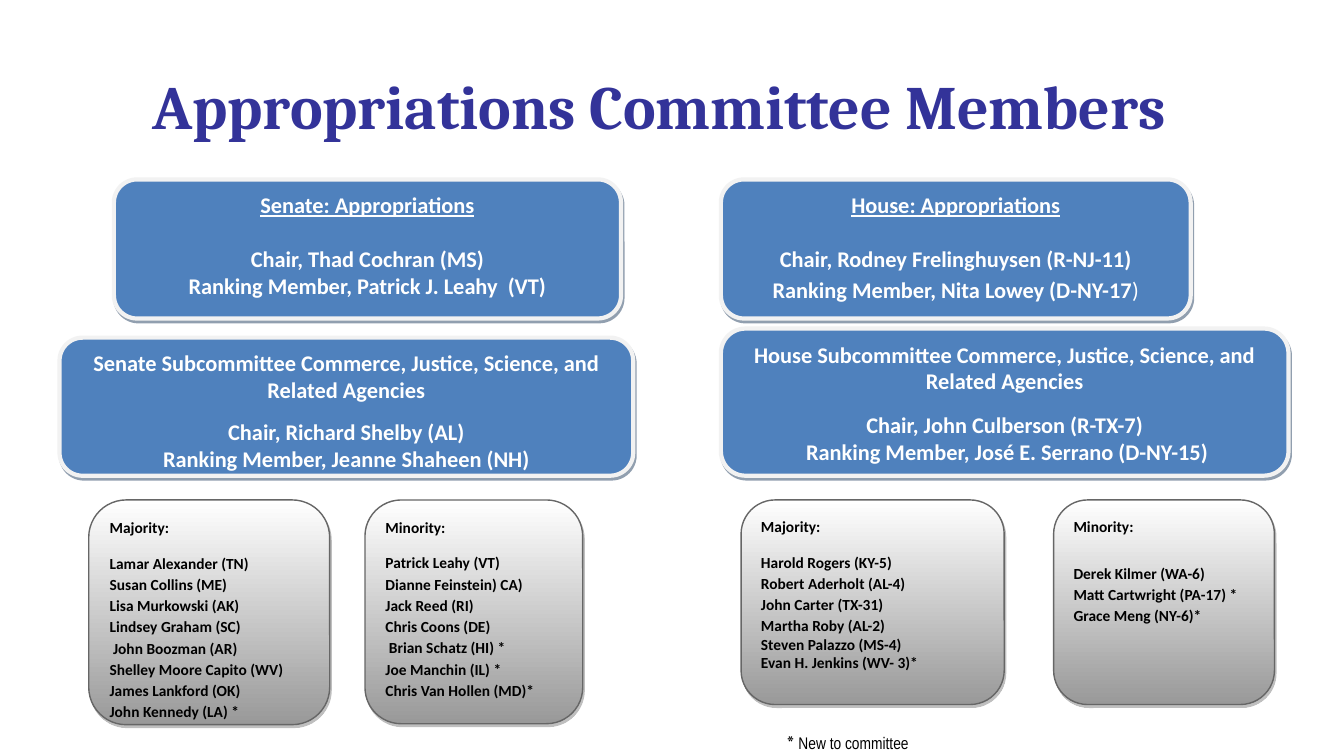
from lxml import etree
from pptx import Presentation
from pptx.dml.color import RGBColor
from pptx.enum.shapes import MSO_SHAPE
from pptx.enum.text import MSO_ANCHOR, MSO_AUTO_SIZE, PP_ALIGN
from pptx.oxml import parse_xml
from pptx.oxml.ns import nsdecls, qn
from pptx.util import Pt

PX = 9144
ROUND = MSO_SHAPE.ROUNDED_RECTANGLE
TOP, MIDDLE = MSO_ANCHOR.TOP, MSO_ANCHOR.MIDDLE
NONE = MSO_AUTO_SIZE.NONE
LEFT, CENTER = PP_ALIGN.LEFT, PP_ALIGN.CENTER

HEX = {
    "title": "333399", "white": "FFFFFF", "black": "000000",
    "blue": "4F81BD", "frame": "F2F2F2", "navy": "254061",
    "gray": "999999", "edge": "666666", "shade": "808080",
}
TITLE = {"name": "Cambria", "size": Pt(44), "bold": True}
HEAD = {"name": "Calibri", "size": Pt(16), "bold": True}
NAMES = {"name": "Calibri", "size": Pt(11), "bold": True}
STAR = {"name": "Cambria", "size": Pt(14), "bold": False}
NOTE = {"name": "Arial Narrow", "size": Pt(12), "bold": False}
UNDER = {"underline": True}
LOOSE = 1.15


def add_run(para, text, look, color):
    run = para.add_run()
    run.text = text
    for key, value in look.items():
        setattr(run.font, key, value)
    run.font.color.rgb = RGBColor.from_string(HEX[color])


def style(shape, line, width, shade):
    shape.line.color.rgb = RGBColor.from_string(HEX[line])
    shape.line.width = Pt(width)
    shape.shadow.inherit = False
    glow = shape.element.spPr.find(qn("a:effectLst"))
    cast = etree.SubElement(glow, qn("a:outerShdw"), dist="28400", dir="3780000",
                            algn="ctr", rotWithShape="0")
    tone = etree.SubElement(cast, qn("a:srgbClr"), val=HEX[shade])
    etree.SubElement(tone, qn("a:alpha"), val="50000")
    frame = shape.text_frame
    frame.word_wrap = True
    frame.auto_size = NONE
    frame.vertical_anchor = TOP


deck = Presentation()
deck.slide_width, deck.slide_height = 1333 * PX, 750 * PX
slide = deck.slides.add_slide(deck.slide_layouts[1])
shapes = slide.shapes

title = shapes.title
title.left, title.top, title.width, title.height = [n * PX for n in (133, 50, 1056, 108)]
title.text_frame.auto_size = NONE
title.text_frame.vertical_anchor = MIDDLE
para = title.text_frame.paragraphs[0]
para.alignment = CENTER
add_run(para, "Appropriations Committee Members ", TITLE, "title")

body = slide.placeholders[1]
heads = [
    ((715, 178, 466, 138), 19.5, [
        "House: Appropriations",
        "Chair, Rodney Frelinghuysen (R-NJ-11)",
        "Ranking Member, Nita Lowey (D-NY-17"]),
    ((113, 178, 503, 138), 19.5, [
        "Senate: Appropriations",
        "Chair, Thad Cochran (MS)",
        "Ranking Member, Patrick J. Leahy  (VT)"]),
    ((715, 326, 563, 146), 12, [
        "House Subcommittee Commerce, Justice, Science, and Related Agencies",
        "Chair, John Culberson (R-TX-7)",
        " Ranking Member, José E. Serrano (D-NY-15)"]),
    ((59, 335, 569, 137), 11, [
        "Senate Subcommittee Commerce, Justice, Science, and Related Agencies",
        "Chair, Richard Shelby (AL)",
        "Ranking Member, Jeanne Shaheen (NH)"]),
]
for spot, gap, lines in heads:
    left, top, width, height = [n * PX for n in spot]
    main = lines[0].endswith(": Appropriations")
    listed = lines[0].startswith("Senate:")
    if listed:
        box = body
        box.left, box.top, box.width, box.height = left, top, width, height
        box.element.spPr.append(parse_xml(
            f'<a:prstGeom {nsdecls("a")} prst="roundRect"><a:avLst/></a:prstGeom>'))
    else:
        box = shapes.add_shape(ROUND, left, top, width, height)
    box.fill.solid()
    box.fill.fore_color.rgb = RGBColor.from_string(HEX["blue"])
    style(box, "frame", 3, "navy")
    for row, text in enumerate(lines):
        para = box.text_frame.add_paragraph() if row else box.text_frame.paragraphs[0]
        para.alignment = CENTER
        para.space_before = Pt(gap if row == 1 else 0)
        if listed:
            props = para._p.get_or_add_pPr()
            props.set("marL", "0")
            props.set("indent", "0")
            etree.SubElement(props, qn("a:buNone"))
        add_run(para, text, HEAD | UNDER if main and row == 0 else HEAD, "white")
    if text.endswith("17"):
        para.line_spacing = LOOSE
        add_run(para, ")", HEAD | {"bold": False}, "white")

groups = [
    ((1045, 496, 219, 203), 18, [
        "Minority:", "Derek Kilmer (WA-6)", "Matt Cartwright (PA-17) *",
        "Grace Meng (NY-6)*"]),
    ((735, 496, 261, 203), 10, [
        "Majority:", "Harold Rogers (KY-5)", "Robert Aderholt (AL-4)",
        "John Carter (TX-31)", "Martha Roby (AL-2)", "Steven Palazzo (MS-4)",
        "Evan H. Jenkins (WV- 3)*"]),
    ((362, 496, 216, 222), 10, [
        "Minority:", "Patrick Leahy (VT)", "Dianne Feinstein) CA)",
        "Jack Reed (RI)", "Chris Coons (DE)", " Brian Schatz (HI) *",
        "Joe Manchin (IL) *", "Chris Van Hollen (MD)*"]),
    ((88, 496, 239, 223), 10, [
        "Majority:", "Lamar Alexander (TN)", "Susan Collins (ME)",
        "Lisa Murkowski (AK)", "Lindsey Graham (SC)", " John Boozman (AR)",
        "Shelley Moore Capito (WV)", "James Lankford (OK)",
        "John Kennedy (LA) *"]),
]
tight = ("Steven Palazzo (MS-4)", "Evan H. Jenkins (WV- 3)*")
for spot, gap, lines in groups:
    box = shapes.add_shape(ROUND, *[n * PX for n in spot])
    box.fill.gradient()
    box.fill.gradient_angle = 270
    for stop, tone, place in zip(box.fill.gradient_stops, ("white", "gray"), (0, 1)):
        stop.color.rgb = RGBColor.from_string(HEX[tone])
        stop.position = place
    style(box, "edge", 1, "shade")
    for row, text in enumerate(lines):
        para = box.text_frame.add_paragraph() if row else box.text_frame.paragraphs[0]
        para.alignment = LEFT
        para.space_before = Pt(gap if row == 1 else 0)
        para.line_spacing = 1.0 if text in tight else LOOSE
        add_run(para, text, NAMES, "black")

note = shapes.add_textbox(*[n * PX for n in (770, 719, 318, 34)])
note.text_frame.word_wrap = True
para = note.text_frame.paragraphs[0]
add_run(para, "*", STAR, "black")
add_run(para, " New to committee", NOTE, "black")

deck.save("out.pptx")
